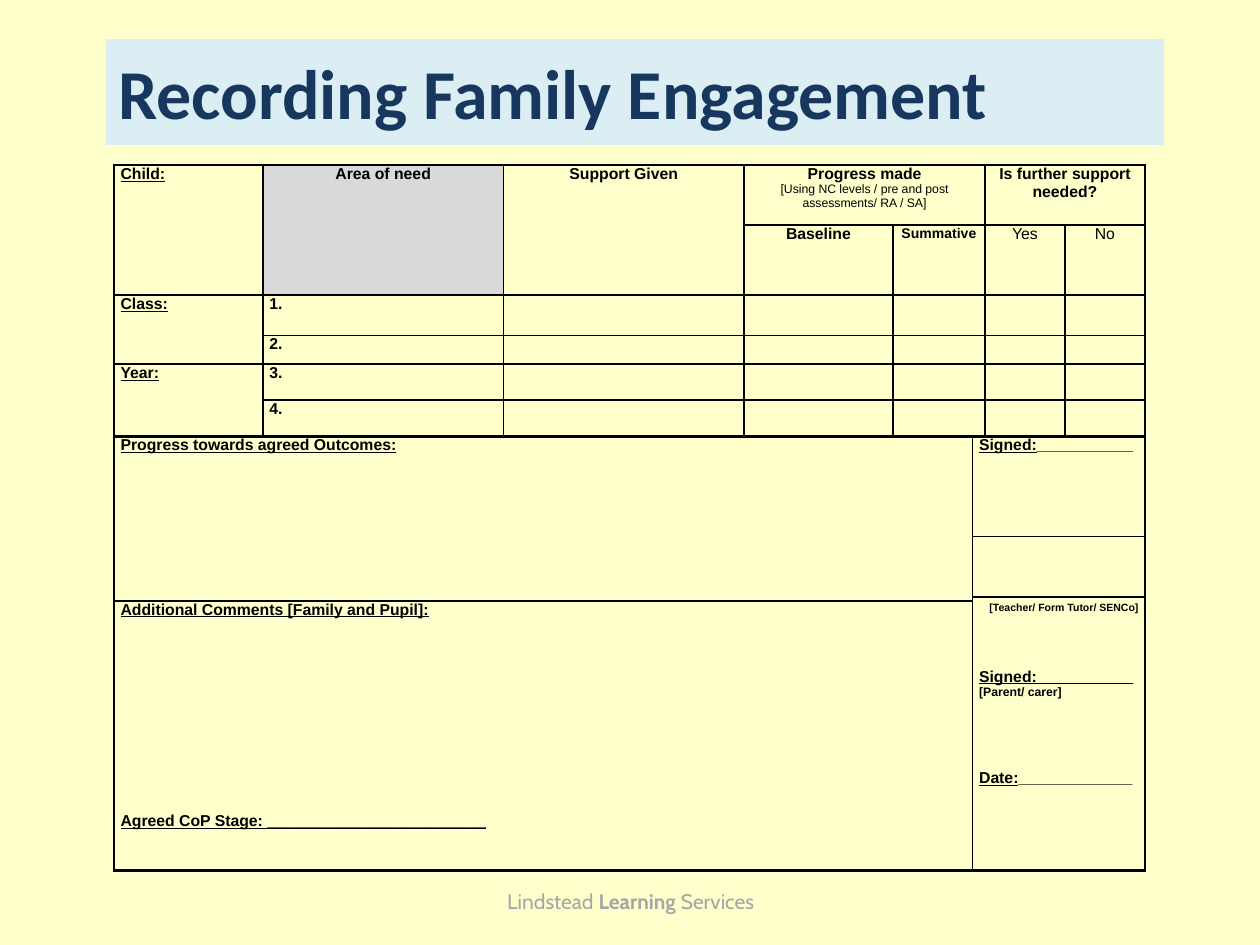
from dataclasses import dataclass

from lxml import etree
from pptx import Presentation
from pptx.dml.color import RGBColor
from pptx.enum.shapes import MSO_SHAPE
from pptx.enum.text import MSO_ANCHOR, PP_ALIGN
from pptx.oxml.ns import qn
from pptx.util import Cm, Pt

CREAM = RGBColor(0xFF, 0xFF, 0xCC)
PALE_BLUE = RGBColor(0xDB, 0xEE, 0xF4)
NAVY = RGBColor(0x17, 0x37, 0x5E)
GREY = RGBColor(0xD9, 0xD9, 0xD9)
FOOTER_GREY = RGBColor(0xA6, 0xA6, 0xA6)
BLACK = RGBColor(0, 0, 0)
LEFT, CENTER, RIGHT = PP_ALIGN.LEFT, PP_ALIGN.CENTER, PP_ALIGN.RIGHT


@dataclass
class Line:
    text: str
    size: float = 9
    bold: bool = True
    underline: bool = False
    align: PP_ALIGN = LEFT
    before: float = 0
    blank_rule: str = ""  # signature rule following an underlined label


class FormSlide:
    font = "Arial"
    thin, heavy = Pt(1), Pt(1.5)

    def __init__(self, prs):
        self.slide = prs.slides.add_slide(prs.slide_layouts[6])
        self.slide.background.fill.solid()
        self.slide.background.fill.fore_color.rgb = CREAM

    def style(self, font, name, size, color, bold=None):
        font.name, font.size, font.bold = name, Pt(size), bold
        font.color.rgb = color

    def title(self, text, *box):
        banner = self.slide.shapes.add_shape(MSO_SHAPE.RECTANGLE, *map(Cm, box))
        banner.shadow.inherit = False
        banner.fill.solid()
        banner.fill.fore_color.rgb = PALE_BLUE
        banner.line.fill.background()
        banner.text_frame.vertical_anchor = MSO_ANCHOR.MIDDLE
        heading = banner.text_frame.paragraphs[0]
        heading.alignment = LEFT
        heading.add_run().text = text
        self.style(heading.font, "Calibri", 40, NAVY, True)

    def footer(self, parts, *box):
        frame = self.slide.shapes.add_textbox(*map(Cm, box)).text_frame
        frame.word_wrap = True
        frame.vertical_anchor = MSO_ANCHOR.MIDDLE
        credit = frame.paragraphs[0]
        credit.alignment = CENTER
        self.style(credit.font, "Cabin", 12, FOOTER_GREY)
        for text, bold in parts:
            run = credit.add_run()
            run.text, run.font.bold = text, bold

    def table(self, left, top, widths, heights, merges):
        frame = self.slide.shapes.add_table(
            len(heights), len(widths), Cm(left), Cm(top),
            Cm(sum(widths)), Cm(sum(heights)))
        table = frame.table
        table.first_row = table.horz_banding = False
        for column, width in zip(table.columns, widths):
            column.width = Cm(width)
        for row, height in zip(table.rows, heights):
            row.height = Cm(height)
        for (row, col), (rows, cols) in merges.items():
            table.cell(row, col).merge(table.cell(row + rows - 1, col + cols - 1))
        return table

    def borders(self, cell, heavy_top, heavy_bottom):
        properties = cell._tc.get_or_add_tcPr()
        sides = {"lnL": False, "lnR": False, "lnT": heavy_top, "lnB": heavy_bottom}
        for side, is_heavy in sides.items():
            width = self.heavy if is_heavy else self.thin
            edge = etree.SubElement(properties, qn(f"a:{side}"), w=str(width))
            fill = etree.SubElement(edge, qn("a:solidFill"))
            etree.SubElement(fill, qn("a:srgbClr"), val=str(BLACK))

    def cell(self, cell, lines, fill=None, top=0):
        cell.margin_left = cell.margin_right = Cm(0.13)
        cell.margin_top, cell.margin_bottom = Cm(top), 0
        if fill is None:
            cell.fill.background()
        else:
            cell.fill.solid()
            cell.fill.fore_color.rgb = fill
        frame = cell.text_frame
        if not lines:  # keeps empty rows as low as the 9 pt ones
            etree.SubElement(frame.paragraphs[0]._p, qn("a:endParaRPr"), sz="900")
        for index, line in enumerate(lines):
            paragraph = frame.add_paragraph() if index else frame.paragraphs[0]
            paragraph.alignment = line.align
            if line.before:
                paragraph.space_before = Pt(line.before)
            self.style(paragraph.font, self.font, line.size, BLACK, line.bold)
            label = paragraph.add_run()
            label.text, label.font.underline = line.text, line.underline
            if line.blank_rule:
                paragraph.add_run().text = line.blank_rule


# Form grid: (row, column) -> (rows, columns) spanned
COLUMNS = [3, 4.85, 4.85, 3, 1.61, 0.25, 1.61, 1.61]
ROWS = [1.21, 1.41, 0.81, 0.58, 0.72, 0.74, 2.02, 1.21, 0.08, 5.44]
MERGES = {
    (0, 0): (2, 1), (0, 1): (2, 1), (0, 2): (2, 1), (0, 3): (1, 3), (0, 6): (1, 2),
    (2, 0): (2, 1), (4, 0): (2, 1),
    (6, 0): (3, 5), (6, 5): (1, 3), (7, 5): (1, 3), (8, 5): (2, 3), (9, 0): (1, 5),
    **{(row, 4): (1, 2) for row in range(1, 6)},
}

CONTENT = {
    # Pupil details
    (0, 0): [Line("Child:", underline=True)],
    (2, 0): [Line("Class:", underline=True)],
    (4, 0): [Line("Year:", underline=True)],
    # Column headings
    (0, 1): [Line("Area of need", align=CENTER)],
    (0, 2): [Line("Support Given", align=CENTER)],
    (0, 3): [Line("Progress made", align=CENTER),
             Line("[Using NC levels / pre and post assessments/ RA / SA]",
                  size=7, bold=False, align=CENTER)],
    (0, 6): [Line("Is further support needed?", align=CENTER)],
    (1, 3): [Line("Baseline", align=CENTER)],
    (1, 4): [Line("Summative", size=8, align=CENTER)],
    (1, 6): [Line("Yes", bold=False, align=CENTER)],
    (1, 7): [Line("No", bold=False, align=CENTER)],
    # Numbered needs
    **{(number + 1, 1): [Line(f"{number}.")] for number in range(1, 5)},
    # Outcomes, comments and signatures
    (6, 0): [Line("Progress towards agreed Outcomes:", underline=True)],
    (9, 0): [Line("Additional Comments [Family and Pupil]:", underline=True),
             Line("Agreed CoP Stage: " + "_" * 25, underline=True, before=111)],
    (6, 5): [Line("Signed:", underline=True, blank_rule="_" * 11)],
    (8, 5): [Line("[Teacher/ Form Tutor/ SENCo]", size=6, align=RIGHT),
             Line("Signed:" + "_" * 11, underline=True, before=31),
             Line("[Parent/ carer]", size=7),
             Line("Date:", underline=True, before=40, blank_rule="_" * 13)],
}


def is_heavy(boundary, col):
    """Heavy rules close the needs grid, the outcomes box and the form."""
    return boundary in (6, len(ROWS)) or (boundary == 9 and col < 5)


def main():
    prs = Presentation()
    prs.slide_width, prs.slide_height = Cm(25.4), Cm(19.05)
    form = FormSlide(prs)

    # Footer
    form.footer([("Lindstead ", False), ("Learning ", True), ("Services", False)],
                8.69, 17.65, 8.05, 1.02)

    # Record form
    record = form.table(2.3, 3.33, COLUMNS, ROWS, MERGES)
    for row in range(len(ROWS)):
        for col in range(len(COLUMNS)):
            cell = record.cell(row, col)
            end = row + (cell.span_height if cell.is_merge_origin else 1)
            form.borders(cell, is_heavy(row, col), is_heavy(end, col))
            form.cell(cell, CONTENT.get((row, col), []),
                      fill=GREY if (row, col) == (0, 1) else None,
                      top=0.1 if (row, col) == (8, 5) else 0)

    # Title banner
    form.title("Recording Family Engagement", 2.13, 0.79, 21.34, 2.13)

    prs.save("out.pptx")


if __name__ == "__main__":
    main()
